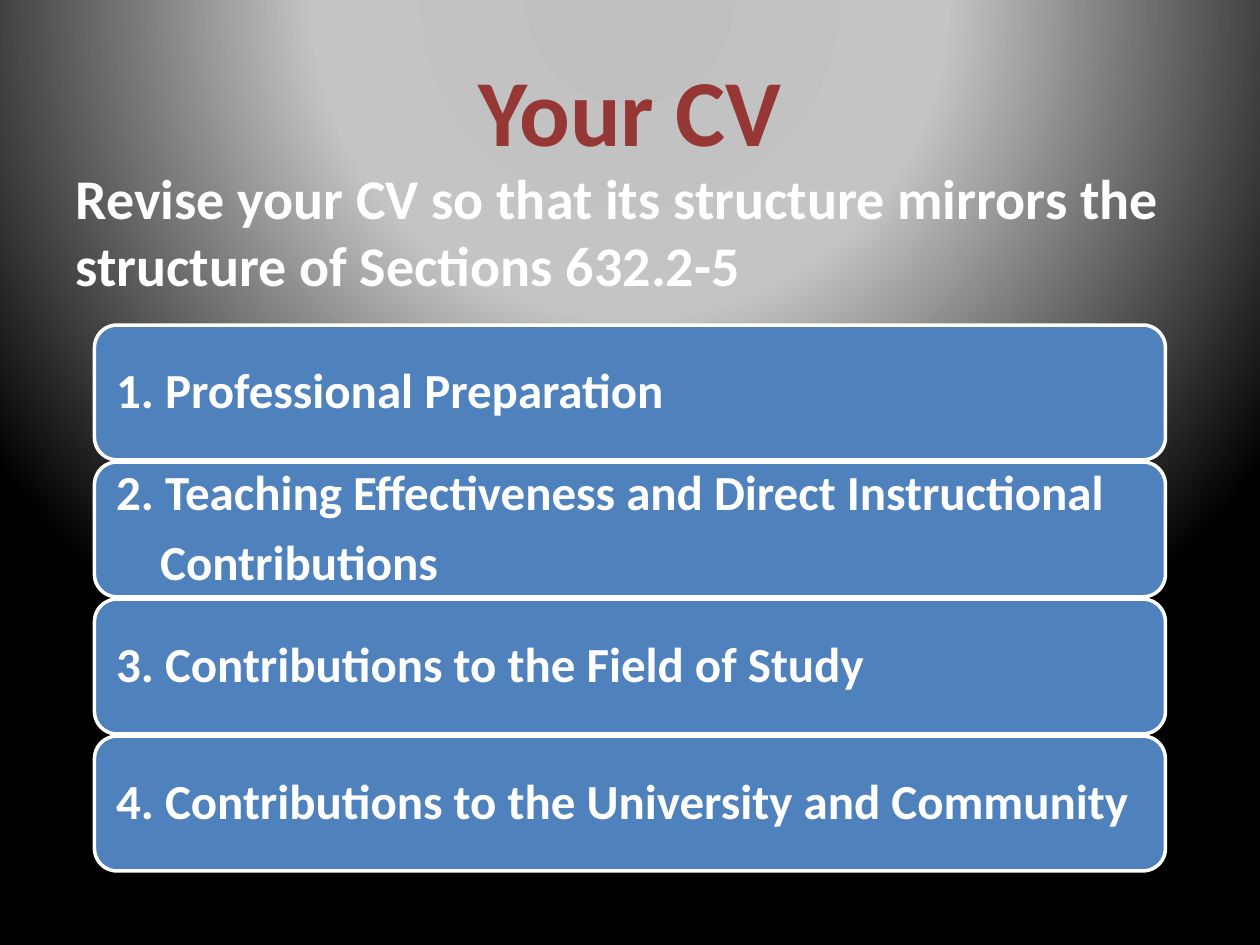
from dataclasses import dataclass

from lxml import etree
from pptx import Presentation
from pptx.dml.color import RGBColor
from pptx.enum.shapes import MSO_SHAPE
from pptx.enum.text import MSO_ANCHOR, MSO_AUTO_SIZE, PP_ALIGN
from pptx.oxml.ns import qn
from pptx.util import Inches, Pt

ROUNDED = MSO_SHAPE.ROUNDED_RECTANGLE
MIDDLE, TOP = MSO_ANCHOR.MIDDLE, MSO_ANCHOR.TOP
LEFT, CENTER = PP_ALIGN.LEFT, PP_ALIGN.CENTER
NO_AUTOFIT = MSO_AUTO_SIZE.NONE
TITLE_ONLY = 5
COLUMNS, ROWS = 40, 30

SECTIONS = [
    ["1. Professional Preparation"],
    ["2. Teaching Effectiveness and Direct Instructional", "Contributions"],
    ["3. Contributions to the Field of Study"],
    ["4. Contributions to the University and Community"],
]
CARD_TOP, CARD_HEIGHT, CARD_PITCH = 10.32, 4.28, 4.35


@dataclass(frozen=True)
class Theme:
    font: str = "Calibri"
    title_color: str = "953735"
    text_color: str = "FFFFFF"
    card_fill: str = "4F81BD"
    card_line: str = "FFFFFF"
    background: tuple = ((0, "BFBFBF"), (40, "C4C4C4"), (100, "000000"))
    title_size: int = 54
    lead_size: int = 32
    card_size: int = 28
    card_line_width: int = 2


class SlideBuilder:
    def __init__(self, presentation, theme):
        self.theme = theme
        self.column = presentation.slide_width / COLUMNS
        self.row = presentation.slide_height / ROWS
        layout = presentation.slide_layouts[TITLE_ONLY]
        self.slide = presentation.slides.add_slide(layout)

    def box(self, left, top, width, height):
        """Turn grid columns and rows into slide lengths."""
        return (round(left * self.column), round(top * self.row),
                round(width * self.column), round(height * self.row))

    def set_text(self, shape, lines, size, color, align=LEFT, anchor=TOP):
        frame = shape.text_frame
        frame.word_wrap = True
        frame.auto_size = NO_AUTOFIT
        frame.vertical_anchor = anchor
        frame.text = "\n".join(lines)
        for paragraph in frame.paragraphs:
            paragraph.alignment = align
            paragraph.font.name = self.theme.font
            paragraph.font.size = Pt(size)
            paragraph.font.bold = True
            paragraph.font.color.rgb = RGBColor.from_string(color)
        return frame

    def radial_background(self):
        """Fill the background with circles centred above the slide."""
        self.slide.background.fill.gradient()
        gradient = self.slide.element.find(".//" + qn("a:gradFill"))
        for child in list(gradient):
            gradient.remove(child)
        stops = etree.SubElement(gradient, qn("a:gsLst"))
        for position, color in self.theme.background:
            stop = etree.SubElement(stops, qn("a:gs"), pos=str(position * 1000))
            etree.SubElement(stop, qn("a:srgbClr"), val=color)
        circle = etree.SubElement(gradient, qn("a:path"), {"path": "circle"})
        etree.SubElement(circle, qn("a:fillToRect"),
                         l="50000", t="-80000", r="50000", b="180000")

    def title(self, text, *area):
        title = self.slide.shapes.title
        title.left, title.top, title.width, title.height = self.box(*area)
        self.set_text(title, [text], self.theme.title_size,
                      self.theme.title_color, CENTER, MIDDLE)

    def lead(self, text, *area):
        text_box = self.slide.shapes.add_textbox(*self.box(*area))
        self.set_text(text_box, [text], self.theme.lead_size,
                      self.theme.text_color)

    def card(self, lines, *area):
        theme = self.theme
        card = self.slide.shapes.add_shape(ROUNDED, *self.box(*area))
        card.shadow.inherit = False
        card.fill.solid()
        card.fill.fore_color.rgb = RGBColor.from_string(theme.card_fill)
        card.line.color.rgb = RGBColor.from_string(theme.card_line)
        card.line.width = Pt(theme.card_line_width)
        frame = self.set_text(card, lines, theme.card_size, theme.text_color,
                              anchor=MIDDLE)
        frame.margin_left = frame.margin_right = Inches(0.12)
        frame.margin_top = frame.margin_bottom = 0
        for paragraph in frame.paragraphs:
            paragraph.line_spacing = 0.9
            paragraph.space_after = Pt(0.35 * theme.card_size)
        for continuation in frame.paragraphs[1:]:
            properties = continuation._p.get_or_add_pPr()
            properties.set("marL", str(Inches(0.35)))
            properties.set("indent", "0")


def main():
    presentation = Presentation()
    presentation.slide_width, presentation.slide_height = Inches(10), Inches(7.5)
    builder = SlideBuilder(presentation, Theme())
    builder.radial_background()
    builder.title("Your CV", 2, 1.2, 36, 4.5)
    builder.lead("Revise your CV so that its structure mirrors the "
                 "structure of Sections 632.2-5", 2, 5, 37, 5)
    for index, lines in enumerate(SECTIONS):
        builder.card(lines, 3, CARD_TOP + index * CARD_PITCH, 34, CARD_HEIGHT)
    presentation.save("out.pptx")


if __name__ == "__main__":
    main()
